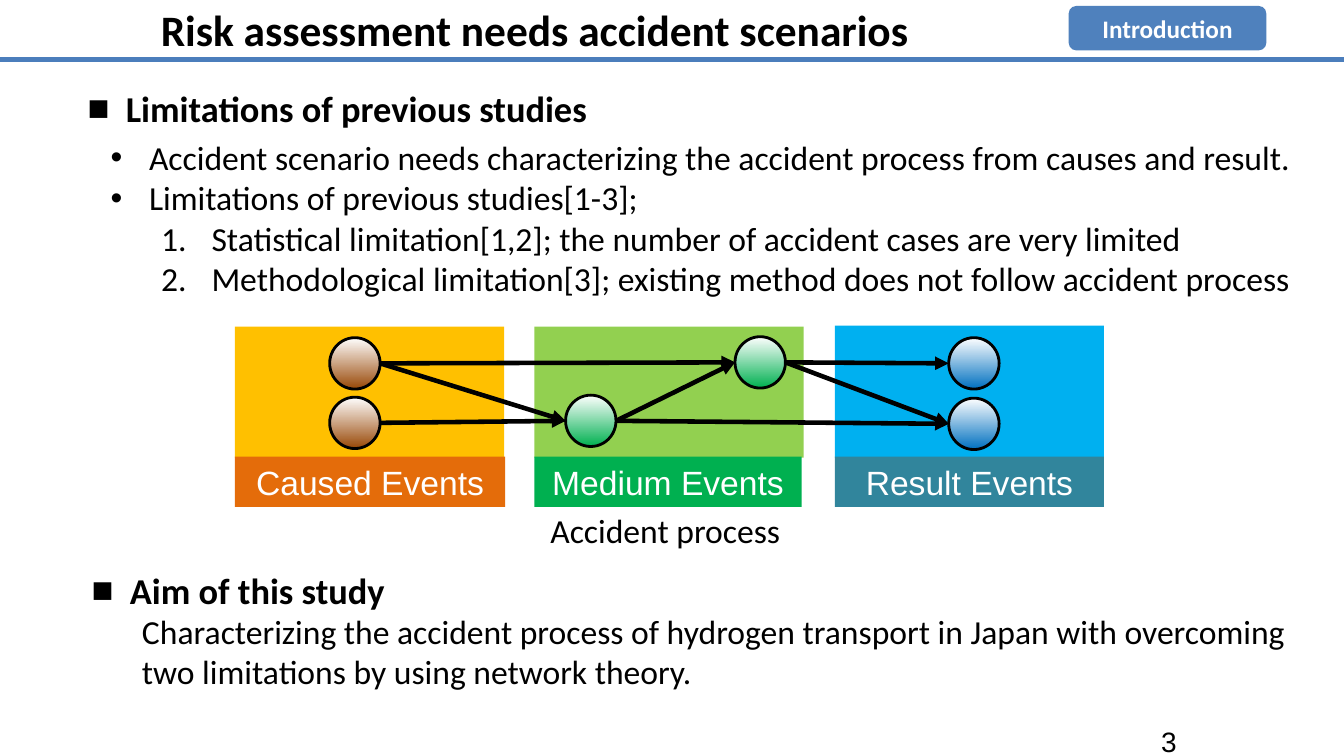
from lxml import etree
from pptx import Presentation
from pptx.dml.color import RGBColor
from pptx.enum.shapes import MSO_CONNECTOR, MSO_SHAPE
from pptx.enum.text import MSO_ANCHOR, PP_ALIGN
from pptx.oxml.ns import qn
from pptx.util import Inches, Pt

RECT, ROUNDED, OVAL = MSO_SHAPE.RECTANGLE, MSO_SHAPE.ROUNDED_RECTANGLE, MSO_SHAPE.OVAL
STRAIGHT = MSO_CONNECTOR.STRAIGHT
LEFT, CENTER, RIGHT = PP_ALIGN.LEFT, PP_ALIGN.CENTER, PP_ALIGN.RIGHT
TOP, MIDDLE = MSO_ANCHOR.TOP, MSO_ANCHOR.MIDDLE

COLORS = {
    "black": "000000", "white": "FFFFFF", "rule": "4B7EBC", "tag": "4F81BD",
    "amber": "FFC000", "orange": "E46C0A", "brown": "984807",
    "lime": "92D050", "green": "00B050",
    "sky": "00B0F0", "teal": "31859C", "blue": "0070C0",
}
NODE_W, NODE_H = 0.5, 0.51

# name: (left, panel top, panel colour, label width, label colour)
STAGES = {
    "Result Events": (8.28, 3.23, "sky", 2.67, "teal"),
    "Medium Events": (5.3, 3.24, "lime", 2.65, "green"),
    "Caused Events": (2.33, 3.24, "amber", 2.68, "orange"),
}
# name: (left, top, colour)
NODES = {
    "cause 1": (3.27, 3.35, "brown"), "cause 2": (3.27, 3.94, "brown"),
    "medium 1": (5.61, 3.92, "green"), "medium 2": (7.29, 3.34, "green"),
    "result 2": (9.41, 3.95, "blue"), "result 1": (9.41, 3.35, "blue"),
}
EDGES = [
    ("cause 1", "medium 2"), ("cause 2", "medium 1"), ("medium 2", "result 1"),
    ("medium 1", "medium 2"), ("medium 2", "result 2"), ("medium 1", "result 2"),
    ("cause 1", "medium 1"),
]
HEADINGS = [("Limitations of previous studies", 0.77, 0.81),
            ("Aim of this study", 0.81, 5.59)]
POINTS = [
    ("Accident scenario needs characterizing the accident process from causes and result.", "•"),
    ("Limitations of previous studies[1-3];", "•"),
    ("Statistical limitation[1,2]; the number of accident cases are very limited", "1."),
    ("Methodological limitation[3]; existing method does not follow accident process", "1."),
]


def rgb(name):
    return RGBColor.from_string(COLORS[name])


def set_bullet(p, bullet):
    """Give a paragraph a bullet character, or automatic numbers for '1.'."""
    pPr = p._p.get_or_add_pPr()
    numbered = bullet == "1."
    if numbered:
        p.level = 1
    pPr.set("marL", str(Inches(1 if numbered else 0.38)))
    pPr.set("indent", str(Inches(-0.5 if numbered else -0.38)))
    etree.SubElement(pPr, qn("a:buFont"), typeface="Arial")
    if numbered:
        etree.SubElement(pPr, qn("a:buAutoNum"), type="arabicPeriod")
    else:
        etree.SubElement(pPr, qn("a:buChar"), char=bullet)


def write(sp, *lines, size=24, font="Calibri", color="black", bold=False,
          align=LEFT, anchor=TOP, wrap=True):
    """Fill a shape with lines, each a string or a (string, bullet) pair."""
    tf = sp.text_frame
    tf.word_wrap = wrap
    tf.vertical_anchor = anchor
    for i, line in enumerate(lines):
        text, bullet = (line, None) if isinstance(line, str) else line
        p = tf.add_paragraph() if i else tf.paragraphs[0]
        p.alignment = align
        if bullet:
            set_bullet(p, bullet)
        r = p.add_run()
        r.text = text
        r.font.size, r.font.name, r.font.bold = Pt(size), font, bold
        r.font.color.rgb = rgb(color)


class SlideBuilder:
    def __init__(self, slide):
        self.s = slide

    def text(self, box, *lines, **fmt):
        sp = self.s.shapes.add_textbox(*map(Inches, box))
        write(sp, *lines, **fmt)

    def shape(self, kind, box, fill):
        sp = self.s.shapes.add_shape(kind, *map(Inches, box))
        sp.shadow.inherit = False
        sp.fill.solid()
        sp.fill.fore_color.rgb = rgb(fill)
        sp.line.fill.background()
        return sp

    def node(self, left, top, color):
        """Outlined circle shaded from its colour at the bottom to white."""
        sp = self.shape(OVAL, (left, top, NODE_W, NODE_H), color)
        sp.fill.gradient()
        sp.fill.gradient_angle = 90
        for stop, name in zip(sp.fill.gradient_stops, (color, "white")):
            stop.color.rgb = rgb(name)
        sp.line.color.rgb = rgb("black")
        sp.line.width = Pt(2)

    def line(self, start, end, color, width, arrow=False):
        sp = self.s.shapes.add_connector(STRAIGHT, *map(Inches, start + end))
        sp.line.color.rgb = rgb(color)
        sp.line.width = Pt(width)
        if arrow:
            etree.SubElement(sp.line._get_or_add_ln(), qn("a:tailEnd"), type="triangle")
        etree.SubElement(sp._element.spPr, qn("a:effectLst"))

    def edge(self, source, target):
        """Arrow from the right side of one node to the left side of another."""
        x1, y1, _ = NODES[source]
        x2, y2, _ = NODES[target]
        self.line((x1 + NODE_W, y1 + NODE_H / 2), (x2, y2 + NODE_H / 2),
                  "black", 3.25, arrow=True)


def main():
    prs = Presentation()
    prs.slide_width, prs.slide_height = Inches(13.33), Inches(7.5)
    s = SlideBuilder(prs.slides.add_slide(prs.slide_layouts[6]))

    for left, top, color, _, _ in STAGES.values():
        s.shape(RECT, (left, top, 2.67, 4.54 - top), color)

    s.text((0, -0.02, 10.6, 0.62), "Risk assessment needs accident scenarios",
           size=31, bold=True, align=CENTER)
    s.text((9.44, 7.15, 2.33, 0.4), "3", size=20, font="Arial",
           align=RIGHT, anchor=MIDDLE)
    for heading, left, top in HEADINGS:
        s.text((left, top, 9.29, 0.54), (heading, "■"), size=26, bold=True)
    s.text((1, 1.31, 12.13, 1.72), *POINTS)
    s.text((1.31, 6.01, 11.55, 0.91),
           "Characterizing the accident process of hydrogen transport in Japan "
           "with overcoming two limitations by using network theory.")

    for source, target in EDGES:
        s.edge(source, target)
    for name, (left, _, _, width, color) in STAGES.items():
        label = s.shape(RECT, (left, 4.53, width, 0.5), color)
        write(label, name, font="Arial", color="white", align=CENTER)
    for node in NODES.values():
        s.node(*node)

    tag = s.shape(ROUNDED, (10.6, 0.06, 1.96, 0.44), "tag")
    write(tag, "Introduction", size=18, color="white", bold=True,
          align=CENTER, anchor=MIDDLE)
    s.line((0, 0.59), (13.33, 0.59), "rule", 3.5)
    s.text((5.36, 5.01, 2.58, 0.5), "Accident process", wrap=False)

    prs.save("out.pptx")


if __name__ == "__main__":
    main()
